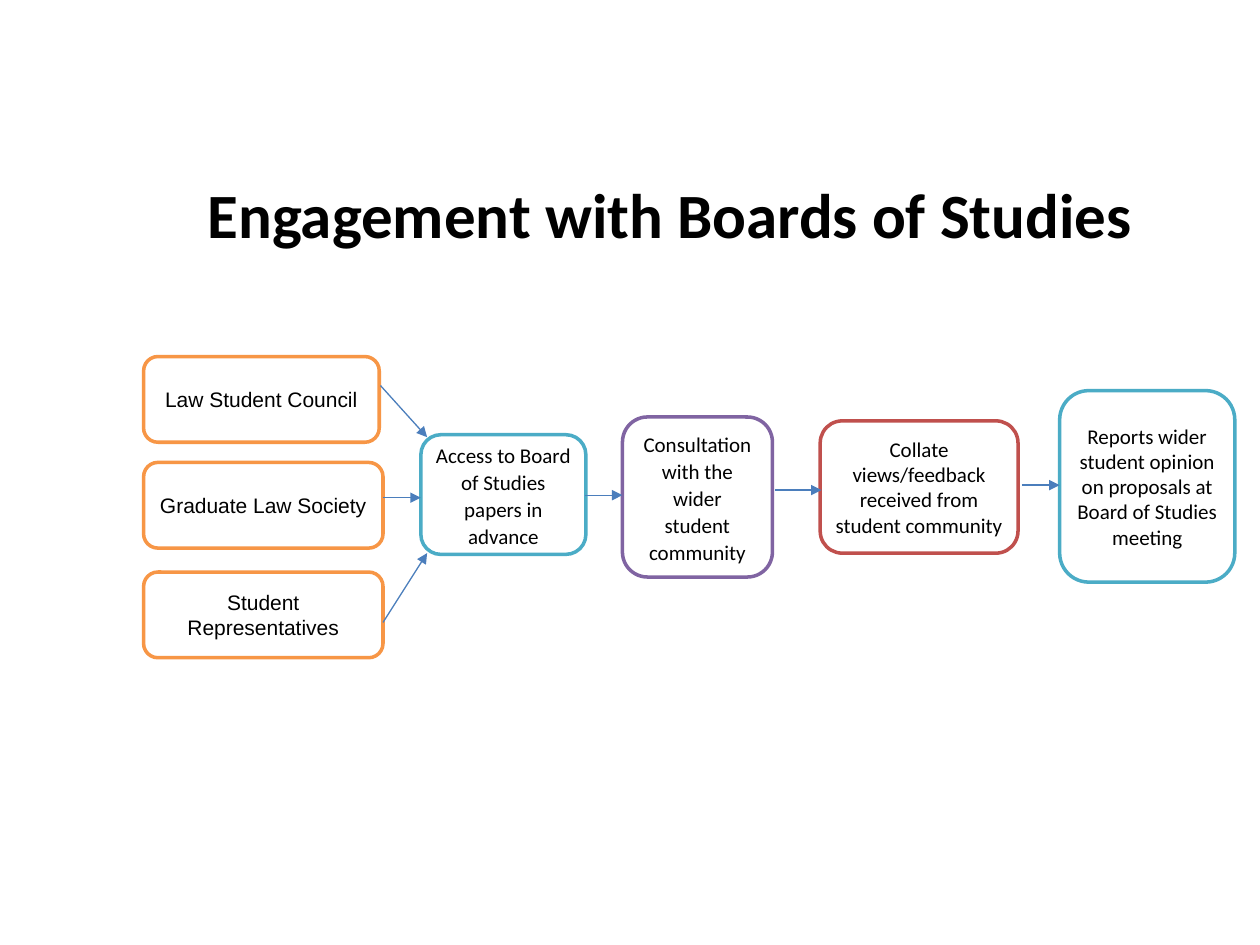
from lxml import etree
from pptx import Presentation
from pptx.dml.color import RGBColor
from pptx.enum.shapes import MSO_CONNECTOR, MSO_SHAPE
from pptx.enum.text import MSO_ANCHOR, PP_ALIGN
from pptx.oxml.ns import qn
from pptx.util import Inches, Pt

ROUNDED = MSO_SHAPE.FLOWCHART_ALTERNATE_PROCESS
STRAIGHT = MSO_CONNECTOR.STRAIGHT
MIDDLE = MSO_ANCHOR.MIDDLE
LEFT, CENTER = PP_ALIGN.LEFT, PP_ALIGN.CENTER

COLORS = {
    "white": "FFFFFF", "black": "000000", "orange": "F79646",
    "teal": "4BACC6", "purple": "8064A2", "red": "C0504D", "arrow": "4B7EBC",
}

TITLE = "Engagement with Boards of Studies"

# Student groups: text, top, width
GROUP_LEFT, GROUP_HEIGHT = 1.14, 0.68
GROUPS = [
    ("Law Student Council", 2.83, 1.87),
    ("Graduate Law Society", 3.67, 1.9),
    ("Student Representatives", 4.54, 1.9),
]

# Process steps: text, (left, top, width, height), outline, paragraph spacing
LOOSE = {"line_spacing": 1.07, "space_after": 6}
STEPS = [
    ("Access to Board of Studies papers in advance",
     (3.34, 3.45, 1.31, 0.95), "teal", LOOSE),
    ("Consultation with the wider student community",
     (4.94, 3.31, 1.19, 1.27), "purple", LOOSE),
    ("Collate views/feedback received from student community",
     (6.51, 3.34, 1.57, 1.05), "red", {}),
    ("Reports wider student opinion on proposals at Board of Studies meeting",
     (8.41, 3.1, 1.39, 1.52), "teal", {}),
]

# Arrows: start point, end point
ARROWS = [
    ((3.02, 3.06), (3.39, 3.47)),
    ((3.04, 3.95), (3.34, 3.95)),
    ((3.04, 4.94), (3.39, 4.39)),
    ((4.64, 3.93), (4.94, 3.93)),
    ((6.15, 3.89), (6.52, 3.89)),
    ((8.11, 3.85), (8.41, 3.85)),
]


def color(name):
    return RGBColor.from_string(COLORS[name])


def write(shape, text, font="Calibri", size=12, bold=False, align=CENTER,
          margins=(0.07, 0.04), line_spacing=None, space_after=None):
    frame = shape.text_frame
    frame.word_wrap = True
    frame.vertical_anchor = MIDDLE
    frame.margin_left = frame.margin_right = Inches(margins[0])
    frame.margin_top = frame.margin_bottom = Inches(margins[1])
    para = frame.paragraphs[0]
    para.alignment = align
    if line_spacing:
        para.line_spacing = line_spacing
    if space_after:
        para.space_after = Pt(space_after)
    span = para.add_run()
    span.text = text
    span.font.name = font
    span.font.size = Pt(size)
    span.font.bold = bold
    span.font.color.rgb = color("black")


def add_box(page, text, place, outline, **text_format):
    box = page.shapes.add_shape(ROUNDED, *map(Inches, place))
    box.shadow.inherit = False
    box.fill.solid()
    box.fill.fore_color.rgb = color("white")
    box.line.color.rgb = color(outline)
    box.line.width = Pt(2)
    write(box, text, **text_format)


def add_arrow(page, start, end):
    arrow = page.shapes.add_connector(STRAIGHT, *map(Inches, start + end))
    arrow.line.color.rgb = color("arrow")
    arrow.line.width = Pt(0.75)
    etree.SubElement(arrow.line._get_or_add_ln(), qn("a:tailEnd"), type="triangle")
    etree.SubElement(arrow._element.spPr, qn("a:effectLst"))


def main():
    deck = Presentation()
    deck.slide_width, deck.slide_height = Inches(10), Inches(7.5)
    page = deck.slides.add_slide(deck.slide_layouts[6])

    title = page.shapes.add_textbox(*map(Inches, (1.55, 1.07, 7.95, 1.25)))
    write(title, TITLE, size=36, bold=True, align=LEFT, margins=(0.1, 0.05))

    for text, top, width in GROUPS:
        place = (GROUP_LEFT, top, width, GROUP_HEIGHT)
        add_box(page, text, place, "orange", font="Arial")
    for text, place, outline, spacing in STEPS:
        add_box(page, text, place, outline, **spacing)
    for start, end in ARROWS:
        add_arrow(page, start, end)

    deck.save("out.pptx")


if __name__ == "__main__":
    main()
